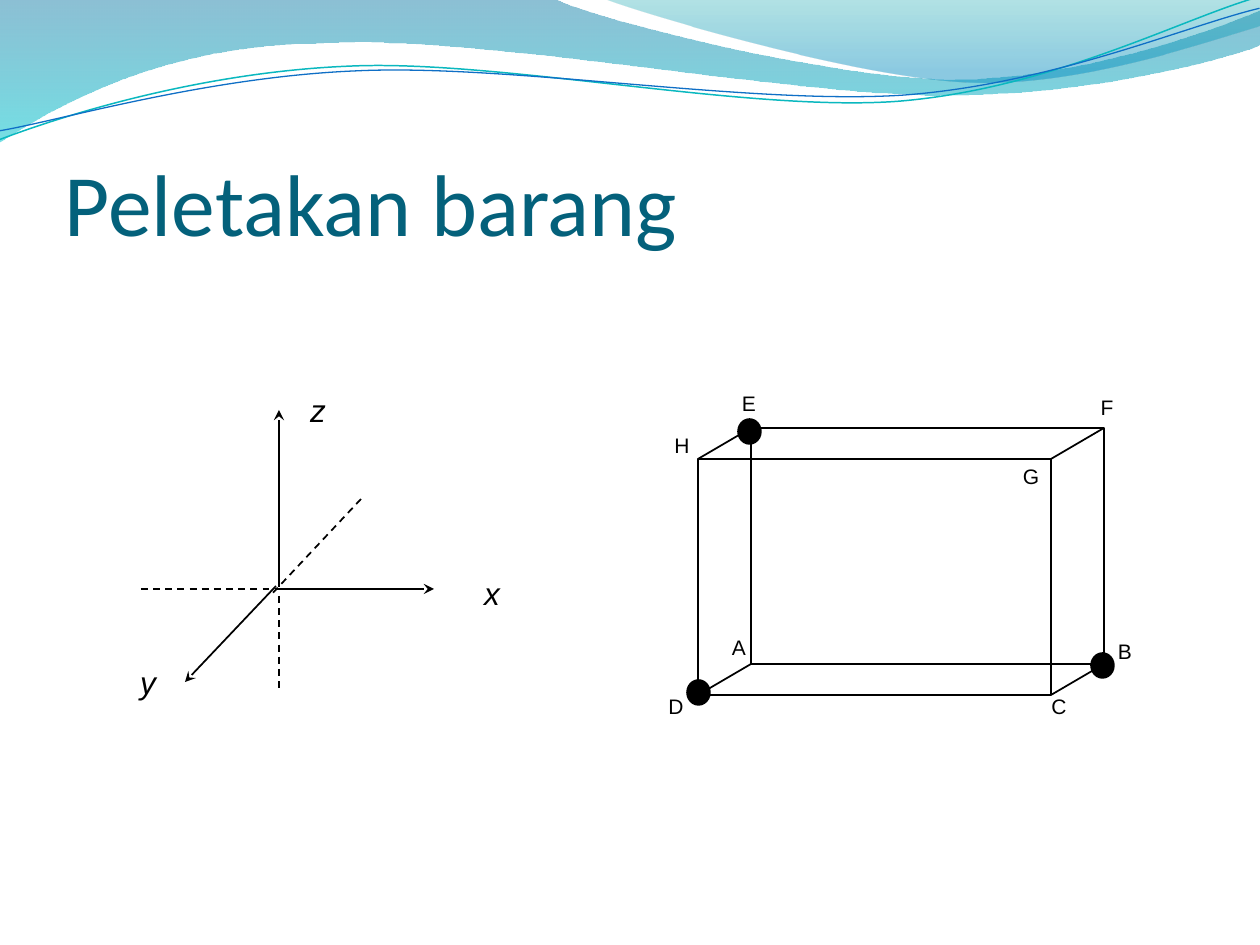
from lxml import etree
from pptx import Presentation
from pptx.dml.color import RGBColor
from pptx.enum.dml import MSO_LINE
from pptx.enum.shapes import MSO_CONNECTOR, MSO_SHAPE
from pptx.enum.text import MSO_ANCHOR, PP_ALIGN
from pptx.oxml.ns import qn
from pptx.util import Pt

PX = 914400 / 126
STRAIGHT = MSO_CONNECTOR.STRAIGHT
RECTANGLE = MSO_SHAPE.RECTANGLE
DOT = MSO_SHAPE.FLOWCHART_CONNECTOR
DASH = MSO_LINE.DASH
TOP, MIDDLE, BOTTOM = MSO_ANCHOR.TOP, MSO_ANCHOR.MIDDLE, MSO_ANCHOR.BOTTOM
LEFT, CENTER = PP_ALIGN.LEFT, PP_ALIGN.CENTER
BLACK = "000000"


def px(value):
    return round(value * PX)


def color(hex_string):
    return RGBColor.from_string(hex_string)


def set_line(shape, hex_string, width):
    shape.line.color.rgb = color(hex_string)
    shape.line.width = Pt(width)


def add_text(slide, text, box, size, font_name="Arial", hex_string=BLACK,
             align=CENTER, anchor=TOP, margins=(13, 6, 13, 6), italic=False):
    frame = slide.shapes.add_textbox(*map(px, box)).text_frame
    frame.word_wrap = True
    frame.vertical_anchor = anchor
    (frame.margin_left, frame.margin_top,
     frame.margin_right, frame.margin_bottom) = map(px, margins)
    frame.text = text
    paragraph = frame.paragraphs[0]
    paragraph.alignment = align
    font = paragraph.runs[0].font
    font.name, font.size, font.italic = font_name, Pt(size), italic
    font.color.rgb = color(hex_string)


def add_line(slide, start, end, dashed=False, arrow=False):
    line = slide.shapes.add_connector(STRAIGHT, *map(px, (*start, *end)))
    set_line(line, BLACK, 1)
    if dashed:
        line.line.dash_style = DASH
    if arrow:
        etree.SubElement(line.line._get_or_add_ln(), qn("a:tailEnd"), type="stealth")
    etree.SubElement(line._element.spPr, qn("a:effectLst"))


def add_curve(slide, start, segments, closed):
    """Each segment is one end point, or two control points and an end point."""
    points = [(px(x), px(y)) for segment in segments
              for x, y in zip(segment[::2], segment[1::2])]
    builder = slide.shapes.build_freeform(*map(px, start))
    builder.add_line_segments(points, close=closed)
    shape = builder.convert_to_shape()
    shape.shadow.inherit = False

    # Join the three points of each curved segment into one Bézier command
    steps = iter(list(shape._element.spPr.iter(qn("a:lnTo"))))
    for segment in segments:
        step = next(steps)
        if len(segment) == 6:
            step.tag = qn("a:cubicBezTo")
            curve = etree.Element(qn("a:cubicBezTo"))
            step.addprevious(curve)
            curve.append(step[0])
            for other in (next(steps), next(steps)):
                curve.append(other[0])
                other.getparent().remove(other)
            step.getparent().remove(step)
    return shape


def add_waves(slide):
    # Translucent bands: start, segments, gradient stops (position, colour, opacity %)
    bands = [
        ((0, -1), [(554, -1), (600, 21, 837, 79, 955, 79), (1075, 79, 1207, 33, 1260, 11),
                   (1261, 45), (1239, 55, 1096, 96, 940, 95), (784, 95, 481, 35, 324, 43),
                   (163, 44, 58, 105, -1, 142)],
         [(0, "0074A1", 45), (1, "00C6CF", 55)]),
        ((604, -1), [(641, 14, 859, 78, 969, 82), (1079, 87, 1211, 40, 1260, 26), (1260, 0)],
         [(0, "00A1A9", 30), (0.8, "008BBF", 45)]),
    ]
    for start, segments, stops in bands:
        band = add_curve(slide, start, segments, closed=True)
        band.line.fill.background()
        band.fill.gradient()
        band.fill.gradient_angle = 270
        for stop, (position, hex_string, _) in zip(band.fill.gradient_stops, stops):
            stop.position = position
            stop.color.rgb = color(hex_string)
        for element, (_, _, opacity) in zip(band._element.spPr.iter(qn("a:srgbClr")), stops):
            etree.SubElement(element, qn("a:alpha"), val=str(opacity * 1000))

    # Thin lines, tilted slightly
    lines = [
        ((-3, 110), [(58, 90, 199, 52, 350, 53), (499, 53, 745, 118, 896, 114),
                     (1049, 109, 1184, 45, 1260, 27)], "0AB8BF", 0.85),
        ((-2, 101), [(57, 94, 207, 57, 357, 58), (509, 58, 750, 111, 902, 108),
                     (1052, 104, 1188, 52, 1262, 38)], "0F6FC6", 0.75),
    ]
    for start, segments, hex_string, width in lines:
        wave = add_curve(slide, start, segments, closed=False)
        wave.rotation = 357.3
        wave.fill.background()
        set_line(wave, hex_string, width)


def add_axes(slide, left, top):
    def place(x, y):
        return left + x, top + y

    # Positive half-axes z, x, y
    for start, end in [((195, 209), (195, 32)), ((195, 211), (350, 211)),
                       ((192, 208), (101, 304))]:
        add_line(slide, place(*start), place(*end), arrow=True)
    # Negative half-axes
    for start, end in [((57, 211), (211, 211)), ((195, 218), (195, 314)),
                       ((277, 121), (186, 218))]:
        add_line(slide, place(*start), place(*end), dashed=True)
    for name, x, y in [("x", 344, 183), ("y", 0, 272), ("z", 170, 0)]:
        add_text(slide, name, (*place(x, y), 128, 64), 18, anchor=MIDDLE,
                 margins=(0, 0, 0, 0), italic=True)


def add_cuboid(slide, left, top):
    width, height = 353, 236
    depth_x, depth_y = 53, -31
    front_x, front_y = left + 53, top + 75

    # Front and back faces
    for x, y in [(front_x, front_y), (front_x + depth_x, front_y + depth_y)]:
        face = slide.shapes.add_shape(RECTANGLE, *map(px, (x, y, width, height)))
        face.shadow.inherit = False
        face.fill.background()
        set_line(face, BLACK, 1)
    # Depth edges
    for x in (front_x, front_x + width):
        for y in (front_y, front_y + height):
            add_line(slide, (x + depth_x, y + depth_y), (x, y))
    # Corner names
    corners = [("A", 63, 245), ("B", 449, 249), ("C", 383, 304), ("H", 6, 43),
               ("D", 0, 304), ("E", 73, 1), ("F", 431, 5), ("G", 355, 74)]
    for name, x, y in corners:
        add_text(slide, name, (left + x, top + y, 62, 48), 12)
    # Marked corners E, D and B
    for x, y in [(94, 36), (43, 297), (447, 270)]:
        dot = slide.shapes.add_shape(DOT, *map(px, (left + x, top + y, 21, 23)))
        dot.shadow.inherit = False
        dot.fill.solid()
        dot.fill.fore_color.rgb = color(BLACK)
        set_line(dot, BLACK, 2)


def main():
    presentation = Presentation()
    presentation.slide_width, presentation.slide_height = px(1260), px(945)
    slide = presentation.slides.add_slide(presentation.slide_layouts[6])
    add_waves(slide)
    add_text(slide, "Peletakan barang", (65, 96, 1144, 158), 50, "Calibri", "04617B",
             align=LEFT, anchor=BOTTOM, margins=(0, 6, 0, 0))
    add_axes(slide, 84, 378)
    add_cuboid(slide, 645, 384)
    presentation.save("out.pptx")


if __name__ == "__main__":
    main()
